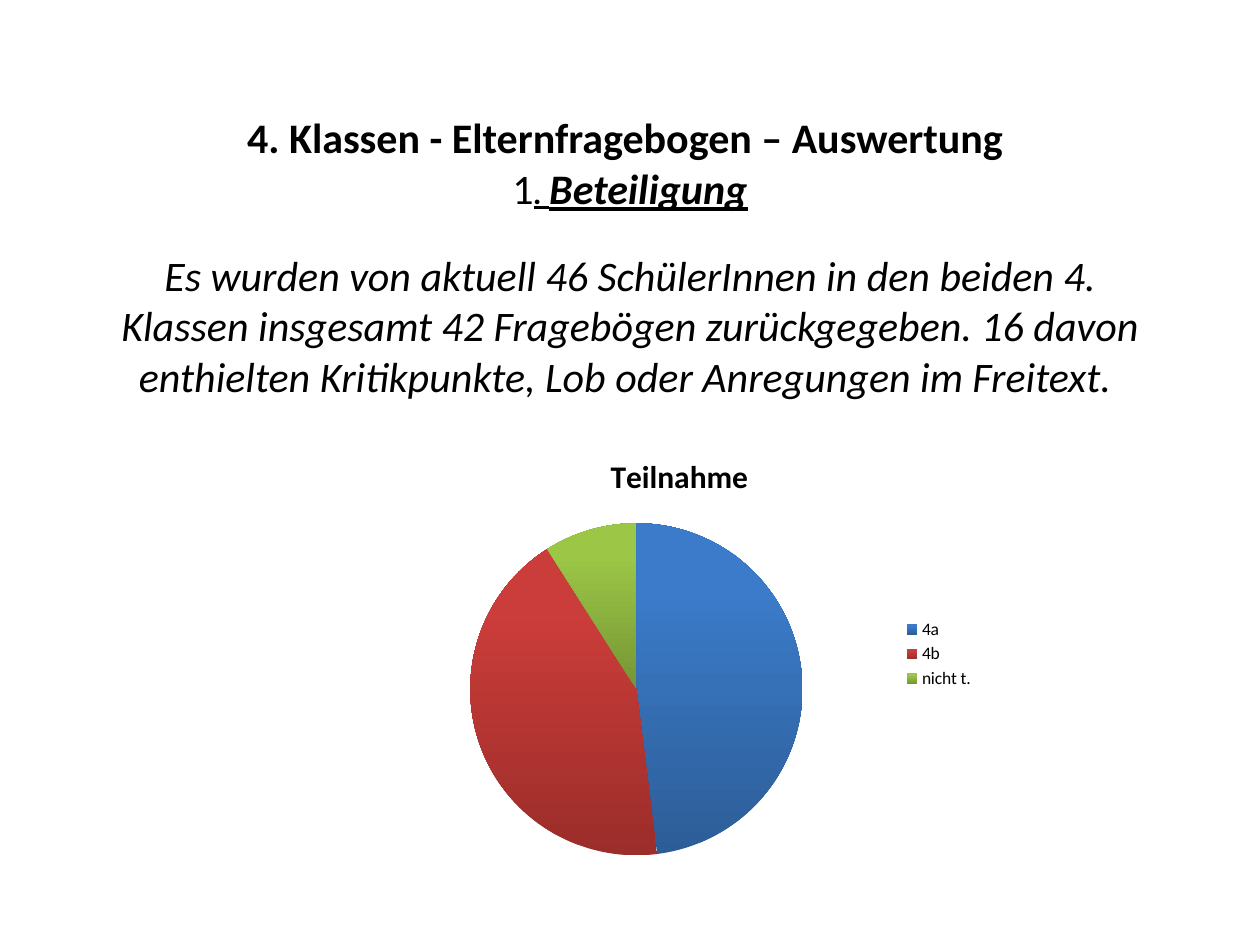
from dataclasses import dataclass

from lxml import etree
from pptx import Presentation
from pptx import util as u
from pptx.chart import data as chart_data
from pptx.dml.color import RGBColor
from pptx.enum import chart as chart_enum
from pptx.enum import text


@dataclass(frozen=True)
class Theme:
    font: str = "Calibri"
    ink: str = "000000"
    heading_size: float = 24
    dot_size: float = 18
    chart_title_size: float = 18
    legend_size: float = 10
    # (dark at the bottom, light at the top) for each slice
    slices: tuple = (("2D5D97", "3B7BC9"), ("9B2D2A", "CB3D3A"), ("769535", "9BC646"))


THEME = Theme()
TITLE_BOX = (54, 37.5, 612, 246)
CHART_BOX = (212.5, 247.5, 351.5, 252.5)
PIE_LAYOUT = {"x": 0.16, "y": 0.2, "w": 0.54, "h": 0.76}
STRONG = {"bold": True, "italic": True, "underline": True}

# (space before, runs of text and format)
PARAGRAPHS = (
    (0, [("4. Klassen - Elternfragebogen – Auswertung ", {"bold": True})]),
    (0, [
        ("1", {}),
        (". ", {**STRONG, "size": u.Pt(THEME.dot_size)}),
        ("Beteiligung", STRONG),
    ]),
    (21, [(
        "Es wurden von aktuell 46 SchülerInnen in den beiden 4. Klassen insgesamt "
        "42 Fragebögen zurückgegeben. 16 davon enthielten Kritikpunkte, Lob oder "
        "Anregungen im Freitext. ",
        {"italic": True},
    )]),
)
PARTICIPATION = {"4a": 48, "4b": 43, "nicht t.": 9}


def points(box):
    return [u.Pt(length) for length in box]


def set_font(font, size, **values):
    for name, value in {"name": THEME.font, "size": u.Pt(size), **values}.items():
        setattr(font, name, value)
    font.color.rgb = RGBColor.from_string(THEME.ink)


def add_heading(slide, box, paragraphs):
    frame = slide.shapes.add_textbox(*points(box)).text_frame
    frame_format = {
        "word_wrap": True,
        "vertical_anchor": text.MSO_ANCHOR.TOP,
        "margin_top": u.Pt(26.5),
    }
    for name, value in frame_format.items():
        setattr(frame, name, value)
    for index, (space_before, runs) in enumerate(paragraphs):
        paragraph = frame.add_paragraph() if index else frame.paragraphs[0]
        paragraph.alignment = text.PP_ALIGN.CENTER
        paragraph.space_before = u.Pt(space_before)
        for words, run_format in runs:
            run = paragraph.add_run()
            run.text = words
            set_font(run.font, THEME.heading_size)
            for name, value in run_format.items():
                setattr(run.font, name, value)


def fill_slice(point, dark, light):
    fill = point.format.fill
    fill.gradient()
    fill.gradient_angle = 90
    for stop, color, position in zip(fill.gradient_stops, (dark, light), (0, 0.8)):
        stop.color.rgb = RGBColor.from_string(color)
        stop.position = position
    point.format.line.fill.background()


def place_plot(chart, layout):
    """Fix the inner plot area as fractions of the chart frame."""
    plot_area = chart.element.chart.plotArea
    namespace = etree.QName(plot_area).namespace
    for old in plot_area.findall(f"{{{namespace}}}layout"):
        plot_area.remove(old)
    holder = etree.Element(f"{{{namespace}}}layout")
    manual = etree.SubElement(holder, f"{{{namespace}}}manualLayout")
    settings = {"layoutTarget": "inner", "xMode": "edge", "yMode": "edge", **layout}
    for name, value in settings.items():
        etree.SubElement(manual, f"{{{namespace}}}{name}", val=str(value))
    plot_area.insert(0, holder)


def add_pie(slide, box, title, values):
    data = chart_data.CategoryChartData()
    data.categories = list(values)
    data.add_series(title, list(values.values()))
    chart = slide.shapes.add_chart(
        chart_enum.XL_CHART_TYPE.PIE, *points(box), data
    ).chart
    set_font(chart.font, THEME.legend_size)
    chart.has_title = True
    chart.chart_title.include_in_layout = False
    paragraph = chart.chart_title.text_frame.paragraphs[0]
    run = paragraph.add_run()
    run.text = title
    set_font(run.font, THEME.chart_title_size, bold=True)
    chart.has_legend = True
    chart.legend.position = chart_enum.XL_LEGEND_POSITION.RIGHT
    chart.legend.include_in_layout = False
    plot = chart.plots[0]
    plot.vary_by_categories = True
    for index, colors in enumerate(THEME.slices):
        fill_slice(plot.series[0].points[index], *colors)
    place_plot(chart, PIE_LAYOUT)


def main():
    presentation = Presentation()
    presentation.slide_width = u.Pt(720)
    presentation.slide_height = u.Pt(540)
    slide = presentation.slides.add_slide(presentation.slide_layouts[6])
    add_heading(slide, TITLE_BOX, PARAGRAPHS)
    add_pie(slide, CHART_BOX, "Teilnahme", PARTICIPATION)
    presentation.save("out.pptx")


if __name__ == "__main__":
    main()
